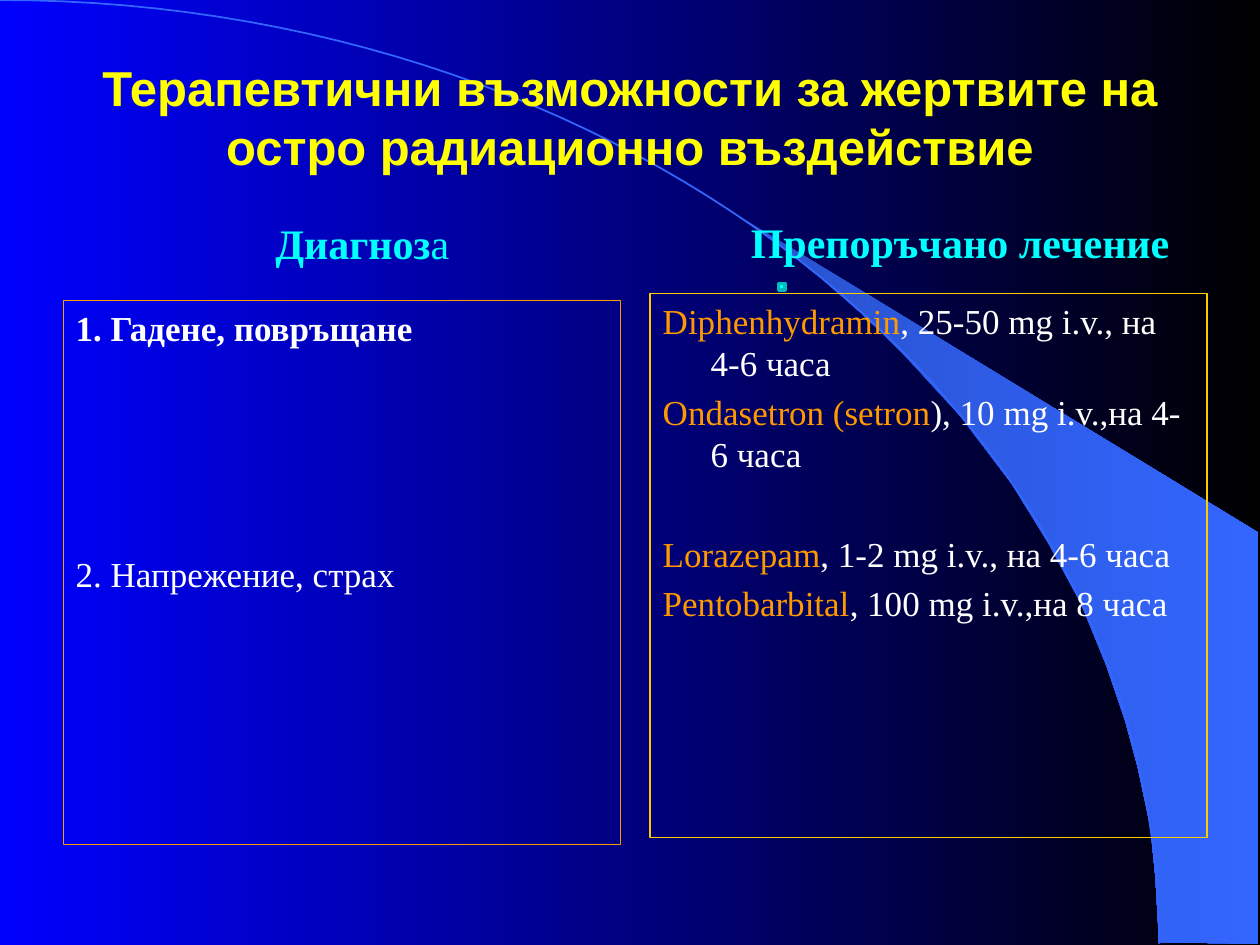
from lxml import etree
from pptx import Presentation
from pptx.dml.color import RGBColor
from pptx.enum.shapes import MSO_SHAPE
from pptx.enum.text import MSO_ANCHOR, MSO_AUTO_SIZE, PP_ALIGN
from pptx.oxml.ns import qn
from pptx.util import Inches, Pt

CENTER, LEFT = PP_ALIGN.CENTER, PP_ALIGN.LEFT
TOP, MIDDLE, BOTTOM = MSO_ANCHOR.TOP, MSO_ANCHOR.MIDDLE, MSO_ANCHOR.BOTTOM
SERIF = "Times New Roman"
YELLOW, CYAN, WHITE, ORANGE = "FFFF00", "00FFFF", "FFFFFF", "FF9900"
BLUE = "3366FF"

# Content: a paragraph is (space before in points, runs); a run is (text, colour, bold)
TITLE = [(0, [("Терапевтични възможности за жертвите на остро радиационно въздействие",
               YELLOW, True)])]
DIAGNOSIS_HEAD = [(0, [("Диагноз", CYAN, True), ("а", CYAN, False)])]
TREATMENT_HEAD = [(0, [("Препоръчано лечение", CYAN, True)])]
DIAGNOSES = [
    (0, [("1. Гадене, повръщане", WHITE, True)]),
    (117, [("2. Напрежение, страх", WHITE, False)]),
]
TREATMENTS = [
    (0, [("Diphenhydramin", ORANGE, False), (", 25-50 mg i.v., на 4-6 часа", WHITE, False)]),
    (4, [("Ondasetron (setron", ORANGE, False), ("), 10 mg i.v.,на 4-6 часа", WHITE, False)]),
    (33, [("Lorazepam", ORANGE, False), (", 1-2 mg i.v., на 4-6 часа", WHITE, False)]),
    (4, [("Pentobarbital", ORANGE, False), (", 100 mg i.v.,на 8 часа", WHITE, False)]),
]

# Background decoration, in inches
WEDGE = [(9.2, 7.48), (9.99, 7.49), (9.99, 4.23), (5.89, 1.73), (6.24, 1.99),
         (6.53, 2.22), (6.85, 2.5), (7.16, 2.8), (7.62, 3.3), (8.03, 3.84),
         (8.32, 4.31), (8.58, 4.79), (8.78, 5.28), (8.93, 5.72), (9.03, 6.09),
         (9.13, 6.56), (9.17, 6.96)]
ARC = [(0, 0), (5.08, 0), (9.2, 3.35), (9.2, 7.49)]
ARC_STEPS = 60


def rgb(color):
    return RGBColor.from_string(color)


def set_gradient(fill, start, end):
    fill.gradient()
    fill.gradient_angle = 0
    for stop, color, position in zip(fill.gradient_stops, (start, end), (0, 1)):
        stop.color.rgb = rgb(color)
        stop.position = position


def set_line(sp, color, width):
    sp.line.color.rgb = rgb(color)
    sp.line.width = Pt(width)


def bezier(t):
    weights = ((1 - t) ** 3, 3 * t * (1 - t) ** 2, 3 * t * t * (1 - t), t ** 3)
    return tuple(sum(w * pt[axis] for w, pt in zip(weights, ARC)) for axis in (0, 1))


def add_outline(slide, points, close, order):
    points = [(Inches(x), Inches(y)) for x, y in points]
    builder = slide.shapes.build_freeform(*points[0], scale=1.0)
    builder.add_line_segments(points[1:], close=close)
    sp = builder.convert_to_shape()
    sp.shadow.inherit = False
    slide.shapes.element.insert(2 + order, sp.element)  # behind the text
    return sp


def fill_text(sp, box, paragraphs, size, font=SERIF, align=LEFT, anchor=TOP, hang=0):
    sp.left, sp.top, sp.width, sp.height = (Inches(v) for v in box)
    tf = sp.text_frame
    tf.word_wrap = True
    tf.auto_size = MSO_AUTO_SIZE.NONE
    tf.vertical_anchor = anchor
    for i, (before, runs) in enumerate(paragraphs):
        p = tf.paragraphs[0] if i == 0 else tf.add_paragraph()
        pPr = p._p.get_or_add_pPr()
        pPr.set("marL", str(Inches(hang)))
        pPr.set("indent", str(-Inches(hang)))
        p.alignment = align
        p.space_before = Pt(before)
        etree.SubElement(pPr, qn("a:buNone"))
        for text, color, bold in runs:
            r = p.add_run()
            r.text = text
            r.font.name, r.font.size, r.font.bold = font, Pt(size), bold
            r.font.color.rgb = rgb(color)


prs = Presentation()
prs.slide_width, prs.slide_height = Inches(10), Inches(7.5)
slide = prs.slides.add_slide(prs.slide_layouts[4])  # title and two headed columns
ph = {sp.placeholder_format.idx: sp for sp in slide.placeholders}

# Background
set_gradient(slide.background.fill, "0000FF", "000000")
wedge = add_outline(slide, WEDGE, close=True, order=0)
set_gradient(wedge.fill, "2851CC", BLUE)
wedge.line.fill.background()
arc = add_outline(slide, [bezier(i / ARC_STEPS) for i in range(ARC_STEPS + 1)],
                  close=False, order=1)
arc.fill.background()
set_line(arc, BLUE, 1)

# Title and column headings
fill_text(ph[0], (0.5, 0.3, 9, 1.25), TITLE, 28, font="Arial", align=CENTER, anchor=MIDDLE)
fill_text(ph[1], (0.51, 1.55, 4.73, 0.63), DIAGNOSIS_HEAD, 24, align=CENTER, anchor=BOTTOM)
fill_text(ph[3], (5.24, 1.62, 4.76, 0.55), TREATMENT_HEAD, 24, align=CENTER, anchor=BOTTOM)

# Framed columns
fill_text(ph[2], (0.5, 2.38, 4.42, 4.32), DIAGNOSES, 20, hang=0.38)
set_line(ph[2], ORANGE, 0.25)
fill_text(ph[4], (5.16, 2.33, 4.42, 4.32), TREATMENTS, 20, hang=0.38)
set_line(ph[4], "FFCC00", 0.75)

# Small square marker
marker = slide.shapes.add_shape(MSO_SHAPE.RECTANGLE, Inches(6.18), Inches(2.25),
                                Inches(0.05), Inches(0.05))
marker.shadow.inherit = False
marker.fill.solid()
marker.fill.fore_color.rgb = rgb(CYAN)
set_line(marker, "00BDBD", 2)

prs.save("out.pptx")
